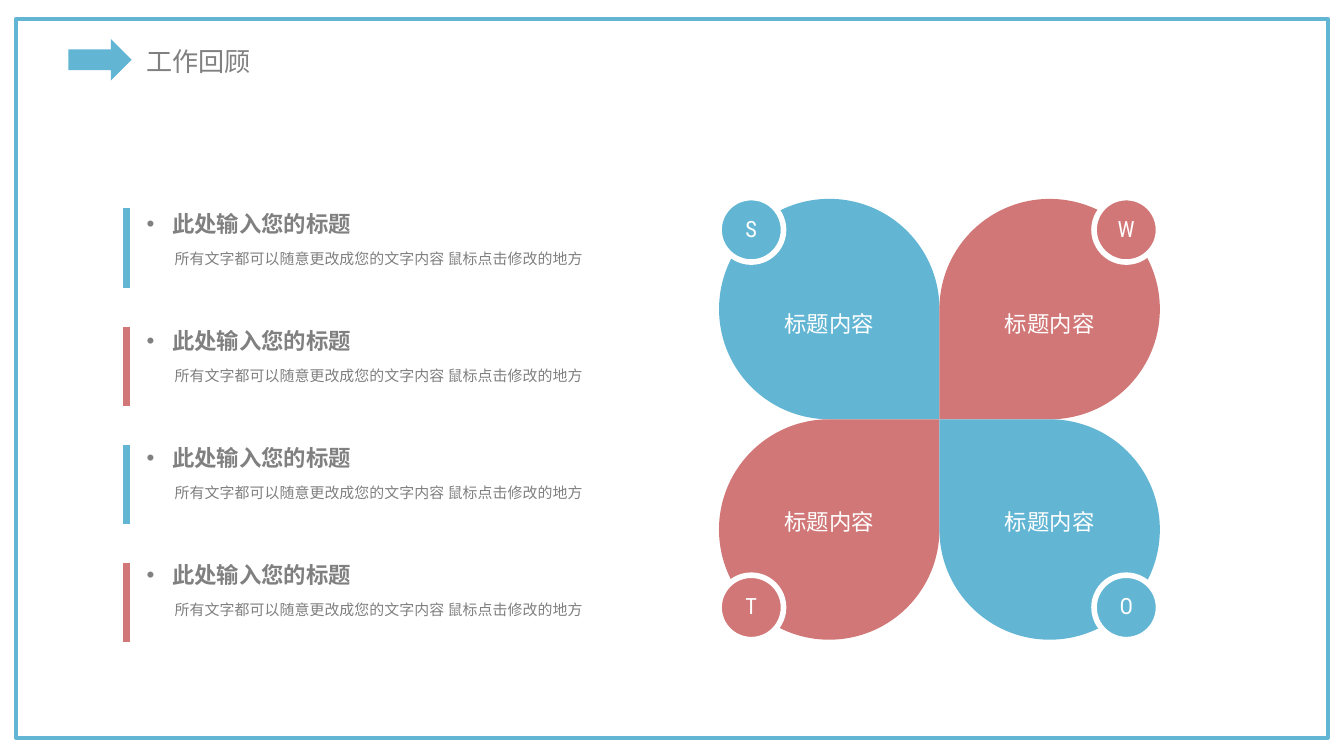
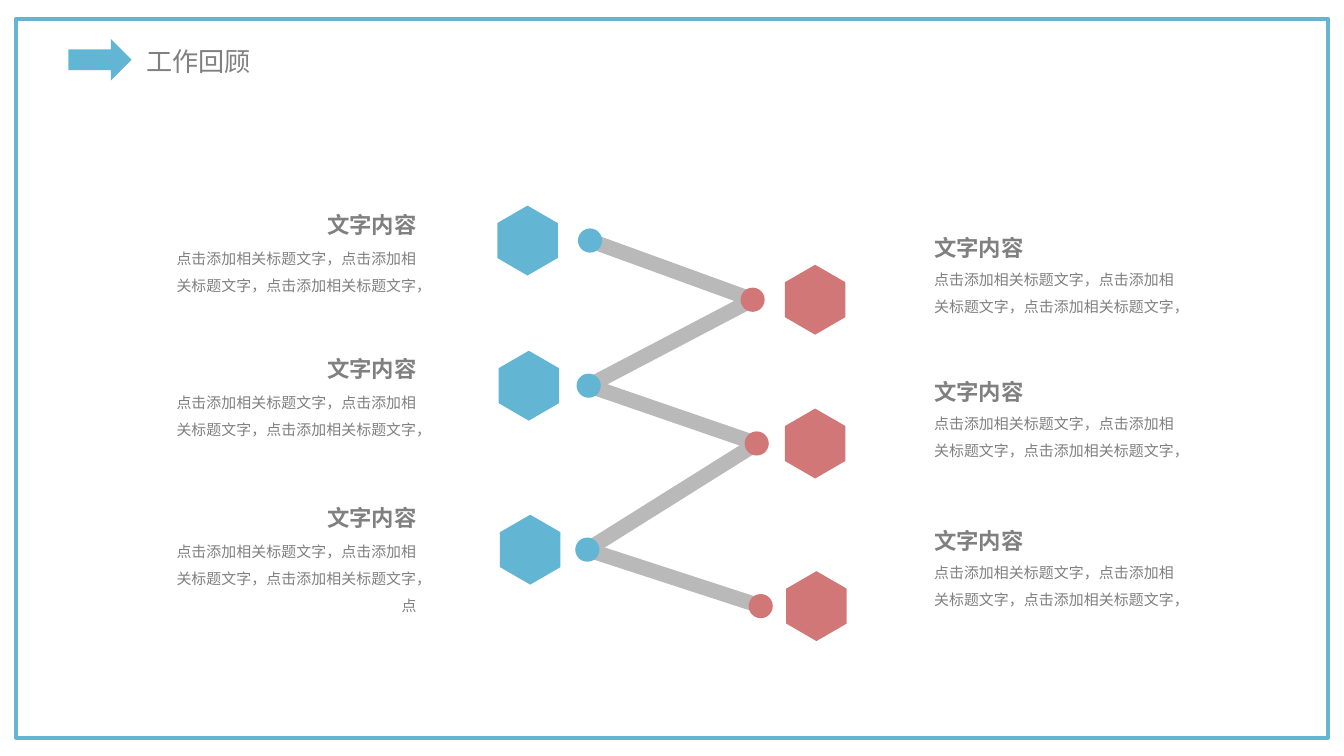
from lxml.etree import SubElement
from pptx import Presentation
from pptx.dml.color import RGBColor
from pptx.enum.shapes import MSO_CONNECTOR, MSO_SHAPE as Preset
from pptx.enum.text import MSO_ANCHOR as Anchor, MSO_AUTO_SIZE as AutoSize, PP_ALIGN as Align
from pptx.oxml.ns import qn
from pptx.util import Inches, Pt

BLUE = RGBColor(0x62, 0xB6, 0xD4)
RED = RGBColor(0xD1, 0x77, 0x77)
GREY = RGBColor(0x80, 0x80, 0x80)
TRACK = RGBColor(0xB9, 0xB9, 0xB9)
WHITE = RGBColor(0xFF, 0xFF, 0xFF)
HAN_FONT = "Noto Sans CJK SC"
BADGE_FONT = "Roboto Condensed"

AGENDA_TITLE = "此处输入您的标题"
AGENDA_DETAIL = "所有文字都可以随意更改成您的文字内容 鼠标点击修改的地方"
PETAL_LABEL = "标题内容"
PETALS = [
    ("S", 0, 0, BLUE, 90),
    ("W", 1, 0, RED, 180),
    ("T", 0, 1, RED, 0),
    ("O", 1, 1, BLUE, 270),
]
STATION_TITLE = "文字内容"
STATION_DETAIL = "点击添加相关标题文字，" * 3
STATIONS = [
    (3.23, 0.26, 2.54, BLUE),
    (4.44, 0.7, 4.68, RED),
    (3.22, 1.34, 2.55, BLUE),
    (4.47, 1.77, 4.68, RED),
    (3.21, 2.56, 2.56, BLUE),
    (4.5, 2.98, 4.69, RED),
]
NOTE_ROWS = [0, 1.07, 2.18]


def fill_text(frame, text, size, font_name, color=GREY, bold=None, align=None,
              spacing=None, anchor=None, insets=(0, 0), wrap=True, grow=False, bullet=False):
    """Write one paragraph into a text frame."""
    frame.margin_left = frame.margin_right = Inches(insets[0])
    frame.margin_top = frame.margin_bottom = Inches(insets[1])
    frame.word_wrap = wrap
    if grow:
        frame.auto_size = AutoSize.SHAPE_TO_FIT_TEXT
    if anchor is not None:
        frame.vertical_anchor = anchor
    paragraph = frame.paragraphs[0]
    paragraph.text = text
    properties = paragraph._p.get_or_add_pPr()
    if bullet:
        properties.set("marL", str(Inches(0.19)))
        properties.set("indent", str(-Inches(0.19)))
        SubElement(properties, qn("a:buFont"), typeface="Arial")
        SubElement(properties, qn("a:buChar"), char="•")
    if align is not None:
        paragraph.alignment = align
    if spacing:
        paragraph.line_spacing = spacing
    font = paragraph.font
    font.size, font.bold, font.name = Pt(size), bold, font_name
    font.color.rgb = color
    SubElement(properties.find(qn("a:defRPr")), qn("a:ea"), typeface=HAN_FONT)


def add_text(slide, left, top, width, height, *content, **style):
    """Place a text box and write into it."""
    box = slide.shapes.add_textbox(Inches(left), Inches(top), Inches(width), Inches(height))
    fill_text(box.text_frame, *content, **style)


def paint(shape, fill, line=None, weight=0):
    """Give a shape a flat fill and an optional outline."""
    shape.shadow.inherit = False
    shape.fill.solid()
    shape.fill.fore_color.rgb = fill
    if line is None:
        shape.line.fill.background()
    else:
        shape.line.color.rgb = line
        shape.line.width = Pt(weight)
    return shape


def add_preset(slide, preset, left, top, width, height, fill, line=None, weight=0):
    """Place a painted preset shape."""
    shape = slide.shapes.add_shape(preset, Inches(left), Inches(top), Inches(width), Inches(height))
    return paint(shape, fill, line, weight)


def add_line(slide, start, end, color, weight):
    """Draw a straight line between two points."""
    line = slide.shapes.add_connector(
        MSO_CONNECTOR.STRAIGHT, *(Inches(value) for value in (*start, *end)))
    line.line.color.rgb = color
    line.line.width = Pt(weight)
    SubElement(line._element.spPr, qn("a:effectLst"))


def add_page(deck, title):
    """Add a slide with the shared frame, arrow and title."""
    slide = deck.slides.add_slide(deck.slide_layouts[6])
    add_preset(slide, Preset.RECTANGLE, 0.12, 0.14, 9.76, 5.35, WHITE, BLUE, 2)
    add_text(slide, 0.98, 0.29, 1.03, 0.34, title, 14, HAN_FONT,
             insets=(0.11, 0.05), wrap=False, grow=True)
    add_preset(slide, Preset.RIGHT_ARROW, 0.51, 0.29, 0.47, 0.31, BLUE)
    return slide


def add_agenda(slide, left, top):
    """List four points, each beside a coloured bar."""
    for index, color in enumerate([BLUE, RED, BLUE, RED]):
        text_top = top + 0.87 * index
        bar_top = top + 0.88 * index
        bar_left = left + 0.11
        add_text(slide, left, text_top + 0.31, 3.51, 0.42, AGENDA_DETAIL, 8, HAN_FONT,
                 align=Align.RIGHT)
        add_text(slide, left + 0.26, text_top, 3.52, 0.25, AGENDA_TITLE, 12, HAN_FONT,
                 bold=True, spacing=0.9, anchor=Anchor.MIDDLE, bullet=True)
        add_line(slide, (bar_left, bar_top), (bar_left, bar_top + 0.59), color, 4)


def add_swot_flower(slide, left, top):
    """Draw four petals meeting in the middle, each with a letter badge."""
    side = 1.64
    lettering = dict(color=WHITE, align=Align.CENTER, spacing=0.9, anchor=Anchor.MIDDLE)
    for letter, column, row, color, turn in PETALS:
        petal_left = left + side * column
        petal = add_preset(slide, Preset.TEAR, petal_left, top + side * row, side, side, color)
        petal.rotation = turn
        badge = add_preset(slide, Preset.OVAL, left + 2.79 * column, top - 0.01 + 2.81 * row,
                           0.48, 0.48, color, WHITE, 3)
        fill_text(badge.text_frame, letter, 12, BADGE_FONT, **lettering)
        add_text(slide, petal_left, top + 0.82 + 1.47 * row, side, 0.24,
                 PETAL_LABEL, 12, BADGE_FONT, **lettering)


def add_hexagon(slide, left, top, color):
    """Draw an upright hexagon."""
    width, height = 0.45, 0.52
    corners = [(0.5, 0), (1, 0.25), (1, 0.75), (0.5, 1), (0, 0.75), (0, 0.25)]
    points = [(Inches(left + width * x), Inches(top + height * y)) for x, y in corners]
    outline = slide.shapes.build_freeform(*points[0])
    outline.add_line_segments(points[1:], close=True)
    paint(outline.convert_to_shape(), color)


def add_note(slide, left, top, detail_drop, detail, align):
    """Place a heading over its detail text, on the given side."""
    heading_left = left + 1.19 if align == Align.RIGHT else left
    shared = dict(align=align, insets=(0.07, 0.04), grow=True)
    add_text(slide, left, top + detail_drop, 2.01, 0.68, detail, 8, "Arial", spacing=1.5, **shared)
    add_text(slide, heading_left, top, 0.82, 0.27, STATION_TITLE, 12, "Calibri",
             bold=True, wrap=False, **shared)


def add_zigzag(slide, left, top):
    """Draw a zigzag track with stations and notes on both sides."""
    stops = [(left + dot_x, top + y) for dot_x, y, _, _ in STATIONS]
    for _, y, hexagon_x, color in STATIONS:
        add_hexagon(slide, left + hexagon_x, top + y - 0.26, color)
    for start, end in zip(stops, stops[1:]):
        add_line(slide, start, end, TRACK, 8)
    for (x, y), (_, _, _, color) in zip(stops, STATIONS):
        add_preset(slide, Preset.OVAL, x - 0.09, y - 0.09, 0.18, 0.18, color)
    for row, offset in enumerate(NOTE_ROWS):
        left_detail = STATION_DETAIL + ("点" if row == len(NOTE_ROWS) - 1 else "")
        add_note(slide, left, top + offset, 0.22, left_detail, Align.RIGHT)
        add_note(slide, left + 5.72, top + 0.17 + offset, 0.21, STATION_DETAIL, Align.LEFT)


def main():
    """Build and save the deck."""
    deck = Presentation()
    deck.slide_width = Inches(10)
    deck.slide_height = deck.slide_width * 9 // 16
    swot = add_page(deck, "工作回顾")
    add_agenda(swot, 0.83, 1.55)
    add_swot_flower(swot, 5.35, 1.48)
    timeline = add_page(deck, "工作回顾")
    add_zigzag(timeline, 1.16, 1.53)
    deck.save("out.pptx")


if __name__ == "__main__":
    main()
